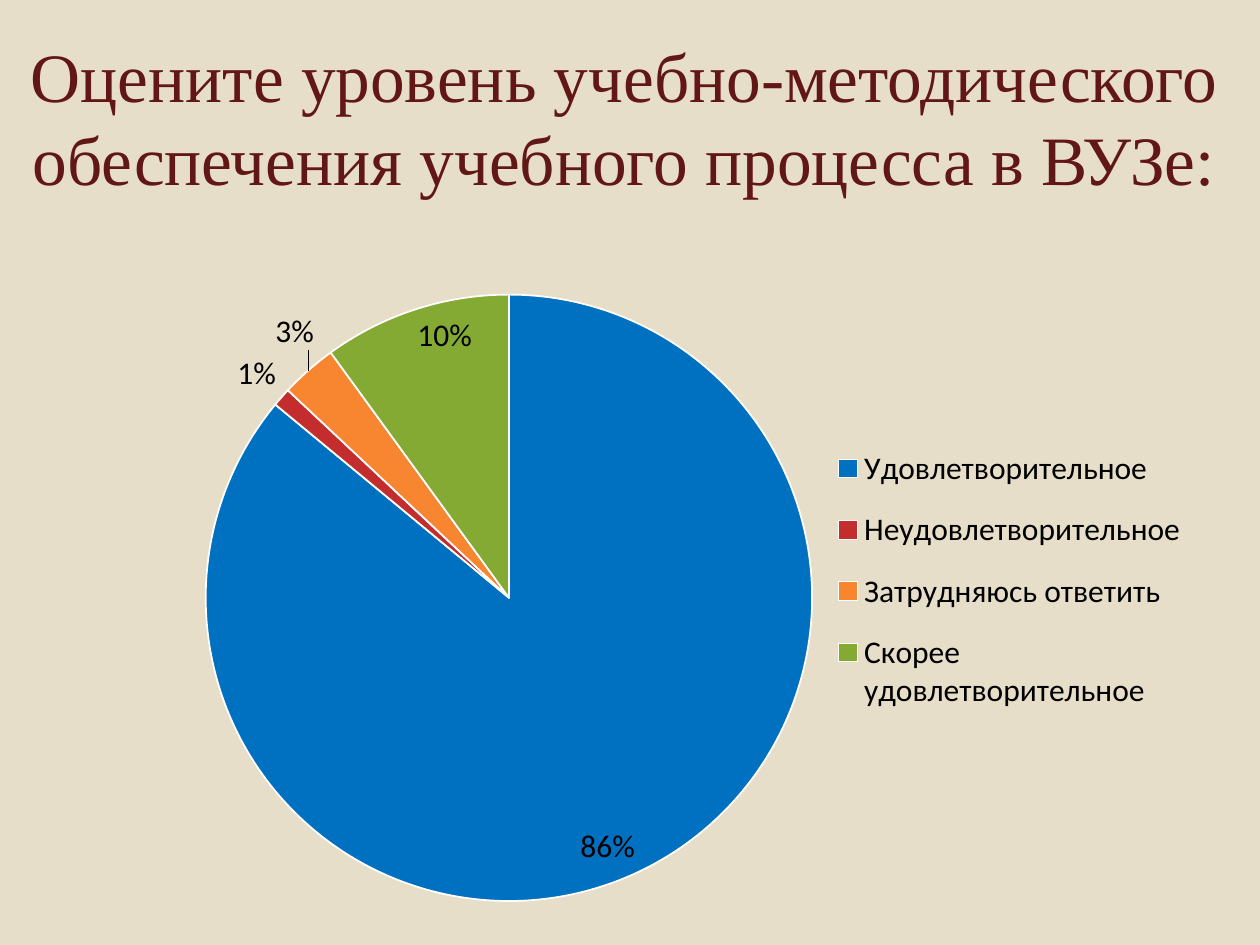
from dataclasses import dataclass

from lxml.etree import SubElement
from pptx import Presentation
from pptx.chart.data import CategoryChartData
from pptx.dml.color import RGBColor
from pptx.enum.chart import XL_CHART_TYPE, XL_LEGEND_POSITION
from pptx.enum.chart import XL_LABEL_POSITION as LabelPos
from pptx.enum.text import MSO_ANCHOR, MSO_AUTO_SIZE, PP_ALIGN
from pptx.oxml import parse_xml
from pptx.oxml.ns import nsdecls, qn
from pptx.util import Cm, Pt

BACKGROUND = RGBColor(0xE7, 0xDE, 0xC9)
MAROON = RGBColor(0x62, 0x17, 0x17)
BLACK = RGBColor(0, 0, 0)
WHITE = RGBColor(0xFF, 0xFF, 0xFF)
BLUE = RGBColor(0x00, 0x70, 0xC0)
RED = RGBColor(0xC3, 0x2D, 0x2E)
ORANGE = RGBColor(0xF8, 0x86, 0x31)
GREEN = RGBColor(0x84, 0xAA, 0x33)


@dataclass
class Answer:
    name: str
    percent: int
    color: RGBColor
    label_pos: LabelPos
    label_shift: tuple[float, float] | None = None


ANSWERS = [
    Answer("Удовлетворительное", 86, BLUE, LabelPos.INSIDE_END),
    Answer("Неудовлетворительное", 1, RED, LabelPos.OUTSIDE_END),
    Answer("Затрудняюсь ответить", 3, ORANGE, LabelPos.OUTSIDE_END, (0.01, -0.02)),
    Answer("Скорее удовлетворительное", 10, GREEN, LabelPos.INSIDE_END),
]


def write_text(tf, text: str, *, font: str, size: float, color: RGBColor,
               align: PP_ALIGN = PP_ALIGN.CENTER) -> None:
    tf.word_wrap = True
    tf.auto_size = MSO_AUTO_SIZE.NONE
    tf.vertical_anchor = MSO_ANCHOR.MIDDLE
    p = tf.paragraphs[0]
    p.alignment = align
    r = p.add_run()
    r.text = text
    r.font.name, r.font.size = font, Pt(size)
    r.font.color.rgb = color


def make_layout(**settings: float | str):
    """Return a manual chart layout holding the given settings in order."""
    layout = parse_xml(f"<c:layout {nsdecls('c')}><c:manualLayout/></c:layout>")
    for name, value in settings.items():
        SubElement(layout[0], qn(f"c:{name}")).set("val", str(value))
    return layout


def place(element, x: float, y: float, w: float, h: float, **target: str) -> None:
    """Position a chart part by fractions of the chart area."""
    for old in element.findall(qn("c:layout")):
        element.remove(old)
    layout = make_layout(**target, xMode="edge", yMode="edge", x=x, y=y, w=w, h=h)
    if element.tag == qn("c:legend"):
        element.find(qn("c:legendPos")).addnext(layout)
    else:
        element.insert(0, layout)


def format_slices(series, answers: list[Answer]) -> None:
    labels = series.data_labels
    for i, answer in enumerate(answers):
        point = series.points[i]
        point.format.fill.solid()
        point.format.fill.fore_color.rgb = answer.color
        point.format.line.color.rgb = WHITE
        point.format.line.width = Pt(1)
        point.data_label.position = answer.label_pos

    dlbls = series._element.find(qn("c:dLbls"))
    for dlbl, answer in zip(dlbls.findall(qn("c:dLbl")), answers):
        if answer.label_shift:
            x, y = answer.label_shift
            dlbl.find(qn("c:idx")).addnext(make_layout(x=x, y=y))
    labels.show_value, labels.show_percentage = False, True
    for tag, value in (("c:showVal", "0"), ("c:showPercent", "1")):
        for flag in dlbls.iter(qn(tag)):
            flag.set("val", value)


def add_pie(slide, answers: list[Answer]) -> None:
    data = CategoryChartData()
    data.categories = [a.name for a in answers]
    data.add_series("Series 1", [a.percent for a in answers])
    chart = slide.shapes.add_chart(XL_CHART_TYPE.PIE, Cm(3.5), Cm(4.32),
                                   Cm(20.8), Cm(14.73), data).chart
    chart.has_title = False
    chart.font.name, chart.font.size = "Calibri", Pt(18)
    chart.font.color.rgb = BLACK
    chart.has_legend = True
    chart.legend.position = XL_LEGEND_POSITION.RIGHT
    chart.legend.include_in_layout = False
    chart.plots[0].vary_by_categories = True
    format_slices(chart.plots[0].series[0], answers)
    plot_area = chart._chartSpace.chart.plotArea
    place(plot_area, 0.03, 0.11, 0.59, 0.83, layoutTarget="inner")
    place(chart.legend._element, 0.63, 0.29, 0.36, 0.42)


def main() -> None:
    prs = Presentation()
    prs.slide_width, prs.slide_height = Cm(25.4), Cm(19.05)
    slide = prs.slides.add_slide(prs.slide_layouts[5])
    slide.background.fill.solid()
    slide.background.fill.fore_color.rgb = BACKGROUND

    add_pie(slide, ANSWERS)
    title = slide.shapes.title
    title.left, title.top = Cm(0), Cm(0.76)
    title.width, title.height = Cm(25.17), Cm(3.18)
    write_text(title.text_frame,
               "Оцените уровень учебно-методического обеспечения учебного процесса в ВУЗе:",
               font="Times New Roman", size=39.6, color=MAROON)
    prs.save("out.pptx")


if __name__ == "__main__":
    main()
